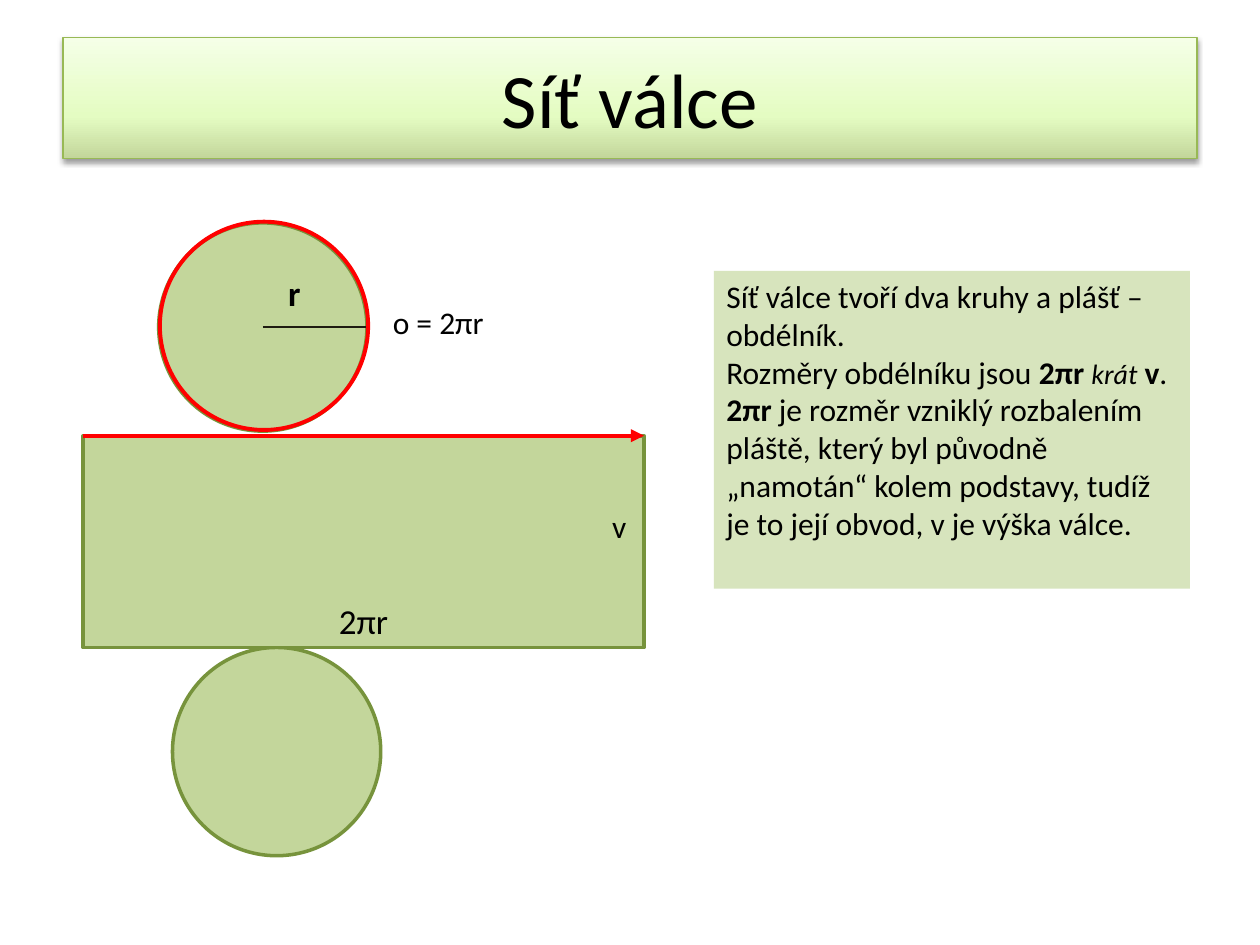
from lxml import etree
from pptx import Presentation
from pptx.dml.color import RGBColor
from pptx.enum.dml import MSO_FILL
from pptx.enum.shapes import MSO_CONNECTOR, MSO_SHAPE
from pptx.enum.text import MSO_ANCHOR, PP_ALIGN
from pptx.oxml.ns import qn
from pptx.util import Pt

RECT, OVAL, LINE = MSO_SHAPE.RECTANGLE, MSO_SHAPE.OVAL, MSO_CONNECTOR.STRAIGHT
LEFT, CENTER = PP_ALIGN.LEFT, PP_ALIGN.CENTER
TOP, MIDDLE, BOTTOM = MSO_ANCHOR.TOP, MSO_ANCHOR.MIDDLE, MSO_ANCHOR.BOTTOM

COLORS = {
    "text": "000000", "body": "C3D69B", "edge": "77933C", "note": "D7E4BD",
    "mark": "FF0000", "radius": "1E1C11", "title_edge": "98B955",
    "title_mid": "E4FCC2", "title_top": "F5FFE7", "shadow": "000000",
}


def rgb(name):
    return RGBColor.from_string(COLORS[name])


def add_xml(parent, tag, **attrs):
    return etree.SubElement(parent, qn(tag), {k: str(v) for k, v in attrs.items()})


class Deck:
    font = "Calibri"

    def __init__(self, width, height):
        self.prs = Presentation()
        self.prs.slide_width, self.prs.slide_height = Pt(width), Pt(height)
        self.s = self.prs.slides.add_slide(self.prs.slide_layouts[6])

    def shape(self, kind, x, y, w, h, fill=None, line=None, weight=2):
        sp = self.s.shapes.add_shape(kind, Pt(x), Pt(y), Pt(w), Pt(h))
        sp.shadow.inherit = False
        if fill:
            sp.fill.solid()
            sp.fill.fore_color.rgb = rgb(fill)
        else:
            sp.fill.background()
        if line:
            sp.line.color.rgb = rgb(line)
            sp.line.width = Pt(weight)
        else:
            sp.line.fill.background()
        return sp

    def text(self, sp, paragraphs, align=CENTER, anchor=MIDDLE, wrap=True):
        """Each run is (text, size, bold, italic); the last two may be left out."""
        tf = sp.text_frame
        tf.word_wrap = wrap
        tf.vertical_anchor = anchor
        for i, runs in enumerate(paragraphs):
            p = tf.add_paragraph() if i else tf.paragraphs[0]
            p.alignment = align
            for text, size, *style in runs:
                r = p.add_run()
                r.text = text
                r.font.name, r.font.size = self.font, Pt(size)
                r.font.color.rgb = rgb("text")
                r.font.bold, r.font.italic = (style + [False, False])[:2]
        return tf

    def label(self, text, x, y, w, h, size=18):
        sp = self.s.shapes.add_textbox(Pt(x), Pt(y), Pt(w), Pt(h))
        self.text(sp, [[(text, size)]], LEFT, wrap=False)

    def line(self, x1, y1, x2, y2, color, weight, arrow=False):
        c = self.s.shapes.add_connector(LINE, Pt(x1), Pt(y1), Pt(x2), Pt(y2))
        c.line.color.rgb = rgb(color)
        c.line.width = Pt(weight)
        if arrow:
            add_xml(c.line._get_or_add_ln(), "a:tailEnd", type="triangle")
        add_xml(c._element.spPr, "a:effectLst")

    def gradient(self, sp, stops):
        """Stops are (percent, colour), running from bottom to top."""
        sp.fill.gradient()
        sp.fill.gradient_angle = 90
        gs_list = sp._element.spPr.find(".//" + qn("a:gsLst"))
        for gs in list(gs_list):
            gs_list.remove(gs)
        for percent, color in stops:
            gs = add_xml(gs_list, "a:gs", pos=percent * 1000)
            add_xml(gs, "a:srgbClr", val=COLORS[color])

    def drop_shadow(self, sp, blur, dist, opacity):
        effects = sp._element.spPr.find(qn("a:effectLst"))
        shadow = add_xml(effects, "a:outerShdw", blurRad=Pt(blur), dist=Pt(dist),
                         dir=5400000, rotWithShape=0)
        color = add_xml(shadow, "a:srgbClr", val=COLORS["shadow"])
        add_xml(color, "a:alpha", val=opacity * 1000)


def main():
    deck = Deck(720, 540)

    # Title bar
    sp = deck.shape(RECT, 36, 21.6, 648, 69, "body", "title_edge", 0.75)
    deck.gradient(sp, [(0, "body"), (35, "title_mid"), (100, "title_top")])
    deck.drop_shadow(sp, 3.1, 1.6, 38)
    deck.text(sp, [[("Síť válce", 44)]])

    # Net of the cylinder: two bases and the unrolled side
    d = 119
    base_x, base_y = 90.7, 127.4
    side_x, side_y, side_w, side_h = 47.5, 249, 320.5, 121
    sp = deck.shape(OVAL, base_x, base_y, d, d, "body", "edge")
    tf = deck.text(sp, [[("r", 20, True)]])
    tf.margin_left, tf.margin_bottom = Pt(43), Pt(43)
    deck.shape(OVAL, 98.6, side_y + side_h, d, d, "body", "edge")
    sp = deck.shape(RECT, side_x, side_y, side_w, side_h, "body", "edge")
    deck.text(sp, [[("2πr", 20)]], anchor=BOTTOM)

    # Explanation
    sp = deck.shape(RECT, 408, 154.8, 272, 181.6, "note")
    deck.text(sp, [
        [("Síť válce tvoří dva kruhy a plášť –obdélník.", 18)],
        [("Rozměry obdélníku jsou ", 18), ("2πr ", 18, True),
         ("krát", 16, False, True), (" ", 18), ("v", 18, True), (".", 18)],
        [("2πr", 18, True),
         (" je rozměr vzniklý rozbalením pláště, který byl původně „namotán“ "
          "kolem podstavy, tudíž je to její obvod, v je výška válce.", 18)],
    ], LEFT, TOP)

    # Radius, height and circumference
    deck.label("v", 342.7, 286, 23, 29)
    mid_y = base_y + d / 2
    deck.line(base_x + d / 2, mid_y, base_x + d, mid_y, "radius", 0.75)
    deck.label("o = 2πr", 217.4, 169.5, 67, 29)
    deck.shape(OVAL, base_x + 0.7, base_y - 0.7, d, d, line="mark", weight=2.25)
    deck.line(side_x, side_y, side_x + side_w, side_y, "mark", 2.5, arrow=True)

    deck.prs.save("out.pptx")


if __name__ == "__main__":
    main()
